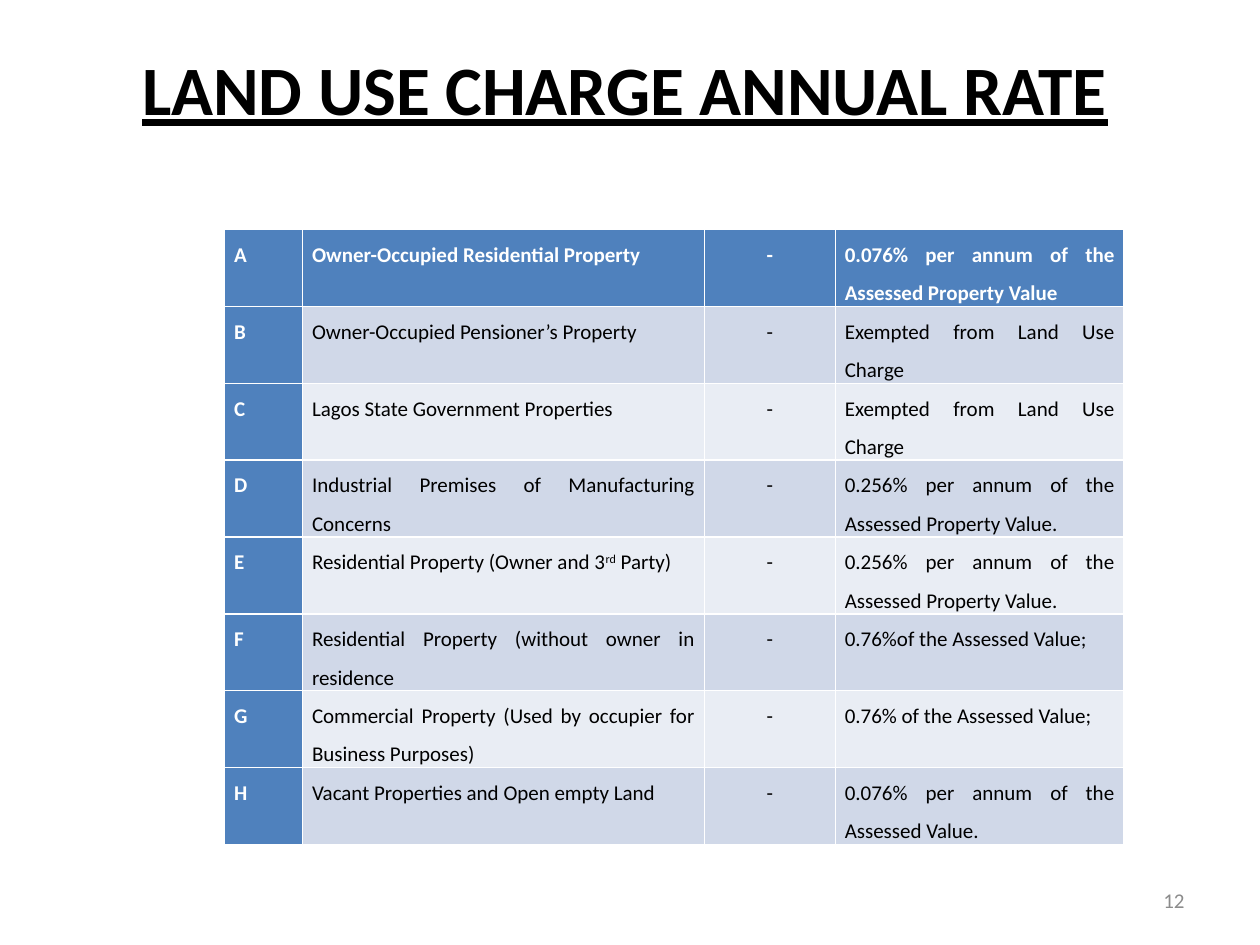
from pptx import Presentation
from pptx.dml.color import RGBColor
from pptx.enum.text import MSO_ANCHOR as Anchor, MSO_AUTO_SIZE as Fit, PP_ALIGN as Align
from pptx.util import Cm, Pt

FONT = "Calibri"
BLACK = RGBColor(0x00, 0x00, 0x00)
WHITE = RGBColor(0xFF, 0xFF, 0xFF)
GREY = RGBColor(0x8C, 0x8C, 0x8C)
BLUE = RGBColor(0x4F, 0x81, 0xBD)
BANDS = (RGBColor(0xE9, 0xED, 0xF4), RGBColor(0xD0, 0xD8, 0xE8))

COLS = (1.57, 8.1, 2.64, 5.82)
ROW = 1.52
# Text between carets is raised.
RATES = (
    ("Owner-Occupied Residential Property", "0.076% per annum of the Assessed Property Value"),
    ("Owner-Occupied Pensioner’s Property ", "Exempted from Land Use Charge "),
    ("Lagos State Government Properties ", "Exempted from Land Use Charge "),
    ("Industrial Premises of Manufacturing Concerns ",
     "0.256% per annum of the Assessed Property Value."),
    ("Residential Property (Owner and 3^rd^ Party)",
     "0.256% per annum of the Assessed Property Value."),
    ("Residential Property (without owner in residence ", "0.76%of the Assessed Value;"),
    ("Commercial Property (Used by occupier for Business Purposes)",
     "0.76% of the Assessed Value;"),
    ("Vacant Properties and Open empty Land ", "0.076% per annum of the Assessed Value."),
)


def style(para, size, color, align, bold=False):
    para.alignment = align
    font = para.font
    font.name, font.size, font.bold = FONT, Pt(size), bold
    font.color.rgb = color


def add_title(slide, text):
    title = slide.shapes.title
    title.left, title.top, title.width, title.height = Cm(1.27), Cm(0.93), Cm(22.66), Cm(2.97)
    frame = title.text_frame
    frame.text = text
    frame.auto_size = Fit.NONE
    frame.vertical_anchor = Anchor.TOP
    frame.margin_top = 0
    para = frame.paragraphs[0]
    style(para, 39.6, BLACK, Align.CENTER, bold=True)
    para.font.underline = True


def fill_cell(cell, text, fill, color, align, bold):
    cell.fill.solid()
    cell.fill.fore_color.rgb = fill
    cell.margin_left = cell.margin_right = Cm(0.19)
    cell.margin_top = cell.margin_bottom = 0
    para = cell.text_frame.paragraphs[0]
    para.line_spacing = 1.5
    style(para, 12, color, align, bold)
    for i, part in enumerate(text.split("^")):
        run = para.add_run()
        run.text = part
        if i % 2:
            run._r.get_or_add_rPr().set("baseline", "30000")


def add_rates(slide):
    frame = slide.shapes.add_table(len(RATES), len(COLS), Cm(4.53), Cm(4.63),
                                   Cm(sum(COLS)), Cm(ROW * len(RATES)))
    table = frame.table
    table.first_col = True
    for col, width in zip(table.columns, COLS):
        col.width = Cm(width)
    for r, (kind, rate) in enumerate(RATES):
        for c, text in enumerate(("ABCDEFGH"[r], kind, "-", rate)):
            head = r == 0 or c == 0
            fill_cell(table.cell(r, c), text,
                      BLUE if head else BANDS[r % 2],
                      WHITE if head else BLACK,
                      Align.CENTER if c == 2 else Align.JUSTIFY, head)


def add_number(slide, text):
    box = slide.shapes.add_textbox(Cm(18.2), Cm(17.65), Cm(5.93), Cm(1.01))
    frame = box.text_frame
    frame.word_wrap = True
    frame.vertical_anchor = Anchor.MIDDLE
    frame.text = text
    style(frame.paragraphs[0], 12, GREY, Align.RIGHT)


def main():
    deck = Presentation()
    deck.slide_width, deck.slide_height = Cm(25.4), Cm(19.05)
    slide = deck.slides.add_slide(deck.slide_layouts[5])
    add_title(slide, "LAND USE CHARGE ANNUAL RATE")
    add_rates(slide)
    add_number(slide, "12")
    deck.save("out.pptx")


if __name__ == "__main__":
    main()
